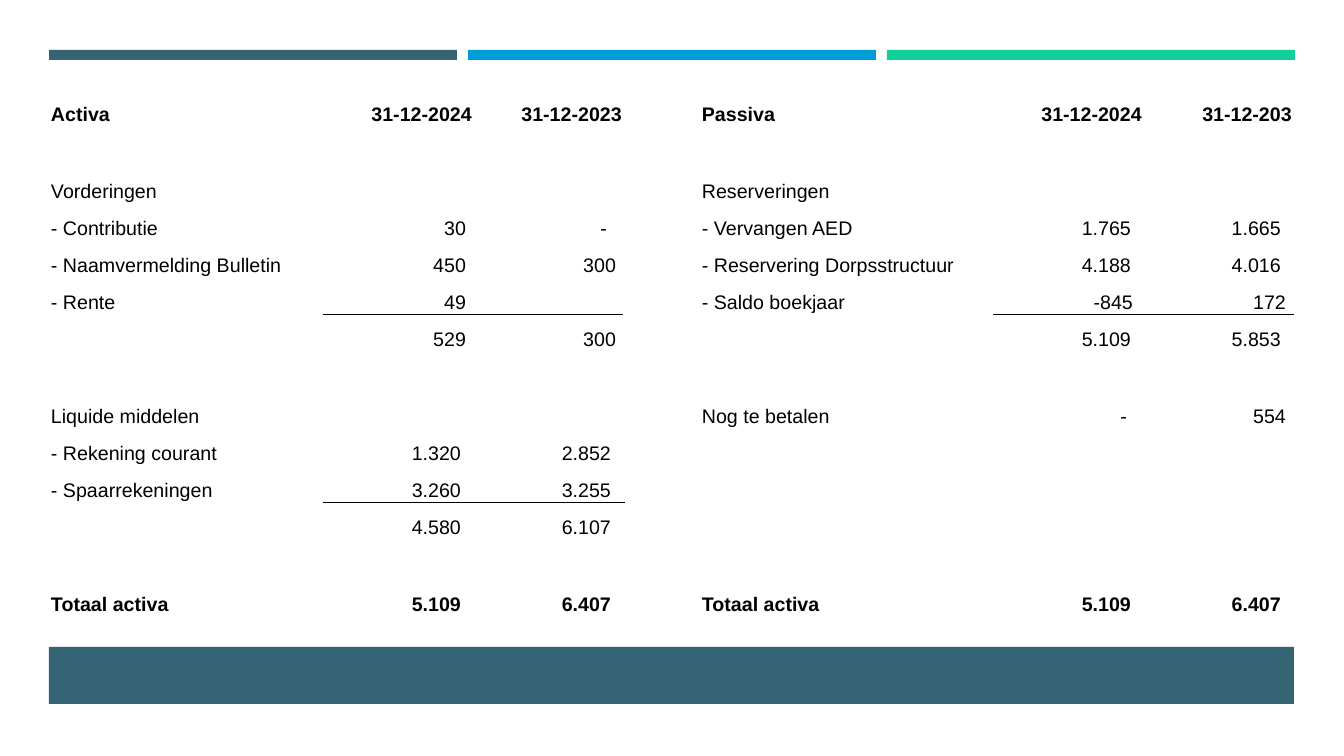
import pptx
import pptx.dml.color
import pptx.enum.shapes
import pptx.enum.text
import pptx.oxml
import pptx.oxml.ns
import pptx.util

RGBColor = pptx.dml.color.RGBColor
BLACK = RGBColor(0x00, 0x00, 0x00)
TEAL = RGBColor(0x34, 0x64, 0x74)
BLUE = RGBColor(0x00, 0x9D, 0xD9)
GREEN = RGBColor(0x10, 0xCF, 0x9B)

BLANK = ("", "", "")
ASSETS = [
    ("Activa", "31-12-2024", "31-12-2023"),
    BLANK,
    ("Vorderingen", "", ""),
    ("- Contributie", "30", "-"),
    ("- Naamvermelding Bulletin", "450", "300"),
    ("- Rente", "49", ""),
    ("", "529", "300"),
    BLANK,
    ("Liquide middelen", "", ""),
    ("- Rekening courant", "1.320", "2.852"),
    ("- Spaarrekeningen", "3.260", "3.255"),
    ("", "4.580", "6.107"),
    BLANK,
    ("Totaal activa", "5.109", "6.407"),
]
LIABILITIES = [
    ("Passiva", "31-12-2024", "31-12-203"),
    BLANK,
    ("Reserveringen", "", ""),
    ("- Vervangen AED", "1.765", "1.665"),
    ("- Reservering Dorpsstructuur", "4.188", "4.016"),
    ("- Saldo boekjaar", "-845", "172"),
    ("", "5.109", "5.853"),
    BLANK,
    ("Nog te betalen", "-", "554"),
    BLANK,
    BLANK,
    BLANK,
    BLANK,
    ("Totaal activa", "5.109", "6.407"),
]
COLUMN_WIDTHS = [275, 150, 150, 76, 294, 150, 150]
ROW_HEIGHT, GAP_ROW_HEIGHT = 37, 40
BOLD_ROWS = (0, len(ASSETS) - 1)
LEFT, TABLE_TOP, CONTENT_WIDTH = 49, 89, 1245
BAR_COLORS = [TEAL, BLUE, GREEN]
BAR_WIDTH, BAR_STEP = 408, 419


def px(length):
    return round(length * 914400 / 100.8)


def add_bar(page, left, top, width, height, color):
    bar = page.shapes.add_shape(pptx.enum.shapes.MSO_SHAPE.RECTANGLE,
                                px(left), px(top), px(width), px(height))
    bar.shadow.inherit = False
    bar.fill.solid()
    bar.fill.fore_color.rgb = color
    bar.line.fill.background()


def right_margin(text):
    """Space after an amount, which depends on how the amount is written."""
    if text.count("-") == 2:
        return 2
    if text == "-":
        return 17
    if text.startswith("-"):
        return 11
    return 13 if "." in text else 8


def write_cell(cell, text, bold=False, amount=False):
    cell.fill.background()
    cell.vertical_anchor = pptx.enum.text.MSO_ANCHOR.BOTTOM
    cell.margin_left = cell.margin_top = px(2)
    cell.margin_right = px(right_margin(text) if amount else 2)
    cell.margin_bottom = 0
    if not text:
        return
    para = cell.text_frame.paragraphs[0]
    align = pptx.enum.text.PP_ALIGN
    para.alignment = align.RIGHT if amount else align.LEFT
    span = para.add_run()
    span.text = text
    span.font.name = "Arial"
    span.font.size = pptx.util.Pt(14)
    span.font.bold = bold
    span.font.color.rgb = BLACK


def add_border(cell, edge):
    namespace = pptx.oxml.ns.nsdecls("a")
    border = pptx.oxml.parse_xml(
        f'<a:{edge} {namespace} w="6350"><a:solidFill><a:srgbClr val="{BLACK}"/>'
        f'</a:solidFill><a:prstDash val="solid"/></a:{edge}>')
    cell._tc.get_or_add_tcPr().insert(0, border)


def add_balance(page):
    rows = [left + ("",) + right for left, right in zip(ASSETS, LIABILITIES)]
    heights = [ROW_HEIGHT if any(row) else GAP_ROW_HEIGHT for row in rows]
    table = page.shapes.add_table(
        len(rows), len(COLUMN_WIDTHS), px(LEFT), px(TABLE_TOP),
        px(CONTENT_WIDTH), px(sum(heights))).table
    table.first_row = table.horz_banding = False
    for column, width in zip(table.columns, COLUMN_WIDTHS):
        column.width = px(width)
    for row, height in zip(table.rows, heights):
        row.height = px(height)
    for r, row in enumerate(rows):
        for c, text in enumerate(row):
            write_cell(table.cell(r, c), text, bold=r in BOLD_ROWS,
                       amount=c not in (0, 3, 4))
    # A row with amounts but no label is a subtotal, ruled off from the row above.
    for start, side in ((0, ASSETS), (4, LIABILITIES)):
        for r, (label, *amounts) in enumerate(side):
            if not label and any(amounts):
                for c in (start + 1, start + 2):
                    add_border(table.cell(r - 1, c), "lnB")
                    add_border(table.cell(r, c), "lnT")


def main():
    deck = pptx.Presentation()
    deck.slide_width, deck.slide_height = px(1344), px(756)
    page = deck.slides.add_slide(deck.slide_layouts[6])
    for index, color in enumerate(BAR_COLORS):
        add_bar(page, LEFT + index * BAR_STEP, 50, BAR_WIDTH, 10, color)
    add_bar(page, LEFT, 647, CONTENT_WIDTH, 57, TEAL)
    add_balance(page)
    deck.save("out.pptx")


if __name__ == "__main__":
    main()
